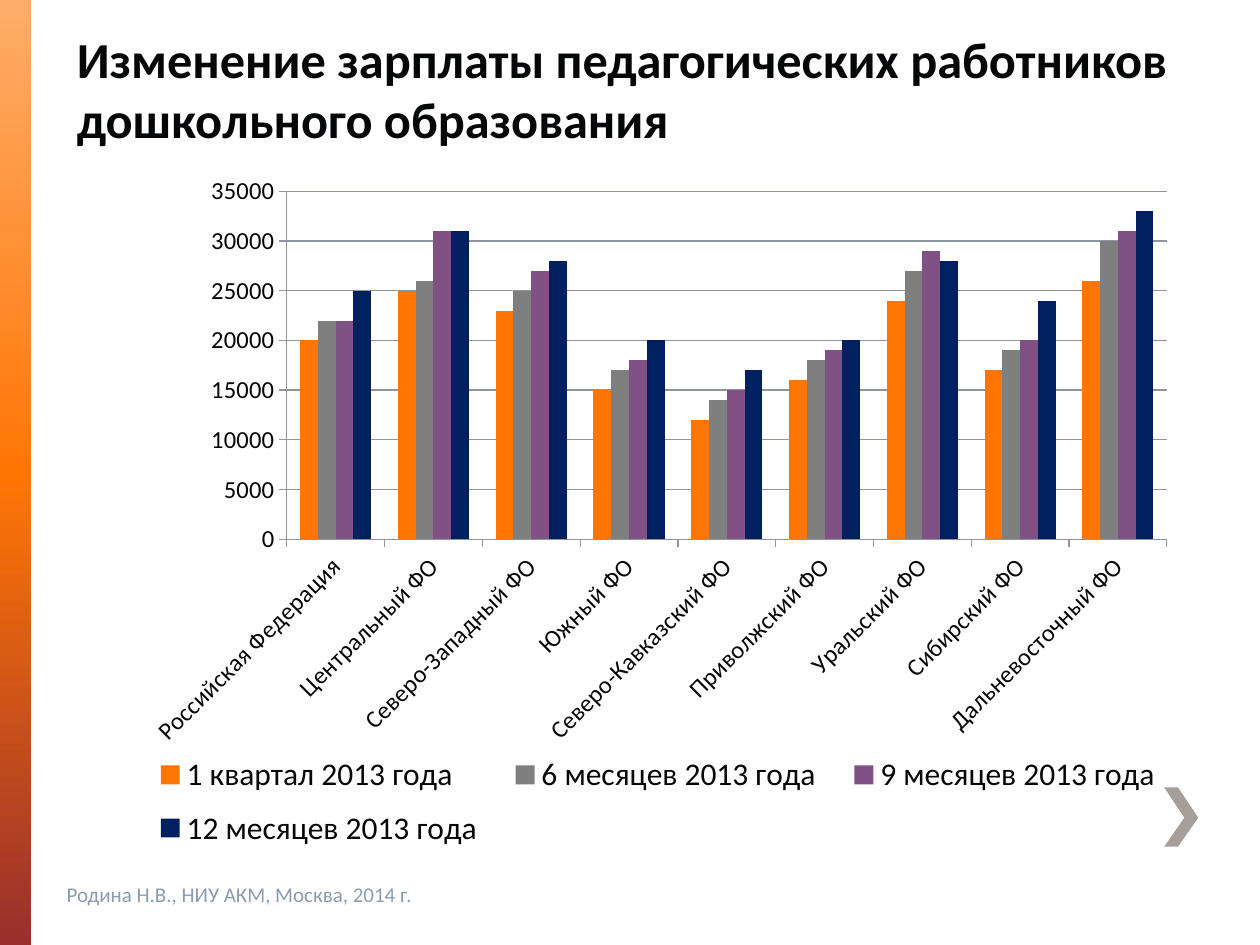
import copy
from dataclasses import dataclass

import pptx
import pptx.chart.data
import pptx.dml.color
import pptx.enum.chart
import pptx.enum.shapes
import pptx.enum.text
import pptx.oxml
import pptx.oxml.ns
import pptx.util
from pptx.util import Inches


@dataclass(frozen=True)
class Theme:
    font: str = "Calibri"
    ink: str = "050607"
    muted: str = "8D9CAD"
    grid: str = "8E959E"
    chevron: str = "A79D99"
    stripe: tuple = ((0, "FFAD69"), (0.5, "FF7605"), (1, "9A2F2C"))
    title_size: float = 28.8
    legend_size: float = 18
    axis_size: float = 14
    footer_size: float = 12


@dataclass(frozen=True)
class Box:
    left: float
    top: float
    width: float
    height: float

    def lengths(self) -> tuple:
        return tuple(Inches(value) for value in (self.left, self.top, self.width, self.height))


@dataclass(frozen=True)
class Series:
    name: str
    color: str
    thousands: tuple


THEME = Theme()
STRIPE_BOX = Box(0, 0, 0.25, 7.5)
TITLE_BOX = Box(0.51, 0.21, 8.99, 1.02)
FOOTER_BOX = Box(0.43, 6.9, 4.18, 0.4)
CHART_BOX = Box(0.51, 1.23, 9.06, 5.67)
PLOT_LAYOUT = Box(0.195, 0.051, 0.771, 0.487)
LEGEND_LAYOUT = Box(0.06, 0.82, 0.92, 0.17)
CHEVRON_POINTS = ((9.35, 6.25), (9.24, 6.25), (9.4, 6.49), (9.24, 6.72), (9.35, 6.72), (9.51, 6.49))

TITLE = "Изменение зарплаты педагогических работников дошкольного образования"
FOOTER = "Родина Н.В., НИУ АКМ, Москва, 2014 г."
REGIONS = (
    "Российская Федерация", "Центральный ФО", "Северо-Западный ФО",
    "Южный ФО", "Северо-Кавказский ФО", "Приволжский ФО",
    "Уральский ФО", "Сибирский ФО", "Дальневосточный ФО",
)
SALARIES = (
    Series("1 квартал 2013 года", "FF7605", (20, 25, 23, 15, 12, 16, 24, 17, 26)),
    Series("6 месяцев 2013 года", "7F7F7F", (22, 26, 25, 17, 14, 18, 27, 19, 30)),
    Series("9 месяцев 2013 года", "7F5185", (22, 31, 27, 18, 15, 19, 29, 20, 31)),
    Series("12 месяцев 2013 года", "002060", (25, 31, 28, 20, 17, 20, 28, 24, 33)),
)


def rgb(value: str) -> pptx.dml.color.RGBColor:
    return pptx.dml.color.RGBColor.from_string(value)


def apply(target, values: dict) -> None:
    for name, value in values.items():
        setattr(target, name, value)


def format_font(font, size: float, color: str, bold: bool = False) -> None:
    apply(font, {"name": THEME.font, "size": pptx.util.Pt(size), "bold": bold})
    font.color.rgb = rgb(color)


def format_line(line) -> None:
    line.color.rgb = rgb(THEME.grid)
    line.width = pptx.util.Pt(0.75)


def write_text(shape, text: str, size: float, color: str, anchor, bold: bool = False) -> None:
    frame = shape.text_frame
    apply(frame, {
        "text": text,
        "word_wrap": True,
        "auto_size": pptx.enum.text.MSO_AUTO_SIZE.NONE,
        "vertical_anchor": anchor,
    })
    paragraph = frame.paragraphs[0]
    paragraph.alignment = pptx.enum.text.PP_ALIGN.LEFT
    format_font(paragraph.runs[0].font, size, color, bold)


def add_stripe(slide) -> None:
    shape = slide.shapes.add_shape(pptx.enum.shapes.MSO_SHAPE.RECTANGLE, *STRIPE_BOX.lengths())
    shape.shadow.inherit = False
    shape.line.fill.background()
    shape.fill.gradient()
    shape.fill.gradient_angle = 270
    stop_list = shape.element.spPr.find(".//" + pptx.oxml.ns.qn("a:gsLst"))
    stop_list.append(copy.deepcopy(stop_list[-1]))
    for stop, (position, color) in zip(shape.fill.gradient_stops, THEME.stripe):
        stop.position = position
        stop.color.rgb = rgb(color)


def add_chevron(slide) -> None:
    points = [(Inches(x), Inches(y)) for x, y in CHEVRON_POINTS]
    builder = slide.shapes.build_freeform(*points[0])
    builder.add_line_segments(points[1:], close=True)
    shape = builder.convert_to_shape()
    shape.shadow.inherit = False
    shape.fill.solid()
    shape.fill.fore_color.rgb = rgb(THEME.chevron)
    shape.line.fill.background()


def make_layout(box: Box, inner: bool = False):
    target = '<c:layoutTarget val="inner"/>' if inner else ""
    values = {"x": box.left, "y": box.top, "w": box.width, "h": box.height}
    modes = "".join(f'<c:{name}Mode val="edge"/>' for name in ("x", "y"))
    sizes = "".join(f'<c:{name} val="{value}"/>' for name, value in values.items())
    return pptx.oxml.parse_xml(
        f'<c:layout {pptx.oxml.ns.nsdecls("c")}><c:manualLayout>'
        f"{target}{modes}{sizes}</c:manualLayout></c:layout>"
    )


def place_part(part, layout, previous: str = "") -> None:
    for old in part.findall(pptx.oxml.ns.qn("c:layout")):
        part.remove(old)
    if previous:
        part.find(pptx.oxml.ns.qn(previous)).addnext(layout)
    else:
        part.insert(0, layout)


def add_salary_chart(slide) -> None:
    data = pptx.chart.data.CategoryChartData(number_format="General")
    data.categories = REGIONS
    for series in SALARIES:
        data.add_series(series.name, [value * 1000 for value in series.thousands])
    kind = pptx.enum.chart.XL_CHART_TYPE.COLUMN_CLUSTERED
    chart = slide.shapes.add_chart(kind, *CHART_BOX.lengths(), data).chart
    apply(chart, {"has_title": False, "has_legend": True})
    format_font(chart.font, THEME.axis_size, THEME.ink)

    plot = chart.plots[0]
    apply(plot, {"gap_width": 150, "overlap": 0, "vary_by_categories": False})
    for column, series in zip(plot.series, SALARIES):
        column.format.fill.solid()
        column.format.fill.fore_color.rgb = rgb(series.color)

    for axis in (chart.category_axis, chart.value_axis):
        axis.major_tick_mark = pptx.enum.chart.XL_TICK_MARK.OUTSIDE
        format_font(axis.tick_labels.font, THEME.axis_size, THEME.ink)
        format_line(axis.format.line)
    chart.category_axis.tick_labels.font._element.getparent().getparent().getparent().find(
        pptx.oxml.ns.qn("a:bodyPr")).set("rot", "-2700000")
    apply(chart.value_axis, {
        "minimum_scale": 0, "maximum_scale": 35000, "major_unit": 5000, "has_major_gridlines": True,
    })
    format_line(chart.value_axis.major_gridlines.format.line)

    legend = chart.legend
    apply(legend, {"position": pptx.enum.chart.XL_LEGEND_POSITION.RIGHT, "include_in_layout": False})
    format_font(legend.font, THEME.legend_size, THEME.ink)
    plot_area = chart.element.find(".//" + pptx.oxml.ns.qn("c:plotArea"))
    place_part(plot_area, make_layout(PLOT_LAYOUT, inner=True))
    place_part(chart.element.find(".//" + pptx.oxml.ns.qn("c:legend")),
               make_layout(LEGEND_LAYOUT), "c:legendPos")


def main() -> None:
    presentation = pptx.Presentation()
    apply(presentation, {"slide_width": Inches(10), "slide_height": Inches(7.5)})
    slide = presentation.slides.add_slide(presentation.slide_layouts.get_by_name("Title Only"))
    anchor = pptx.enum.text.MSO_ANCHOR
    add_stripe(slide)
    add_chevron(slide)
    title = slide.shapes.title
    apply(title, dict(zip(("left", "top", "width", "height"), TITLE_BOX.lengths())))
    write_text(title, TITLE, THEME.title_size, THEME.ink, anchor.BOTTOM, bold=True)
    footer = slide.shapes.add_textbox(*FOOTER_BOX.lengths())
    write_text(footer, FOOTER, THEME.footer_size, THEME.muted, anchor.MIDDLE)
    add_salary_chart(slide)
    presentation.save("out.pptx")


if __name__ == "__main__":
    main()
